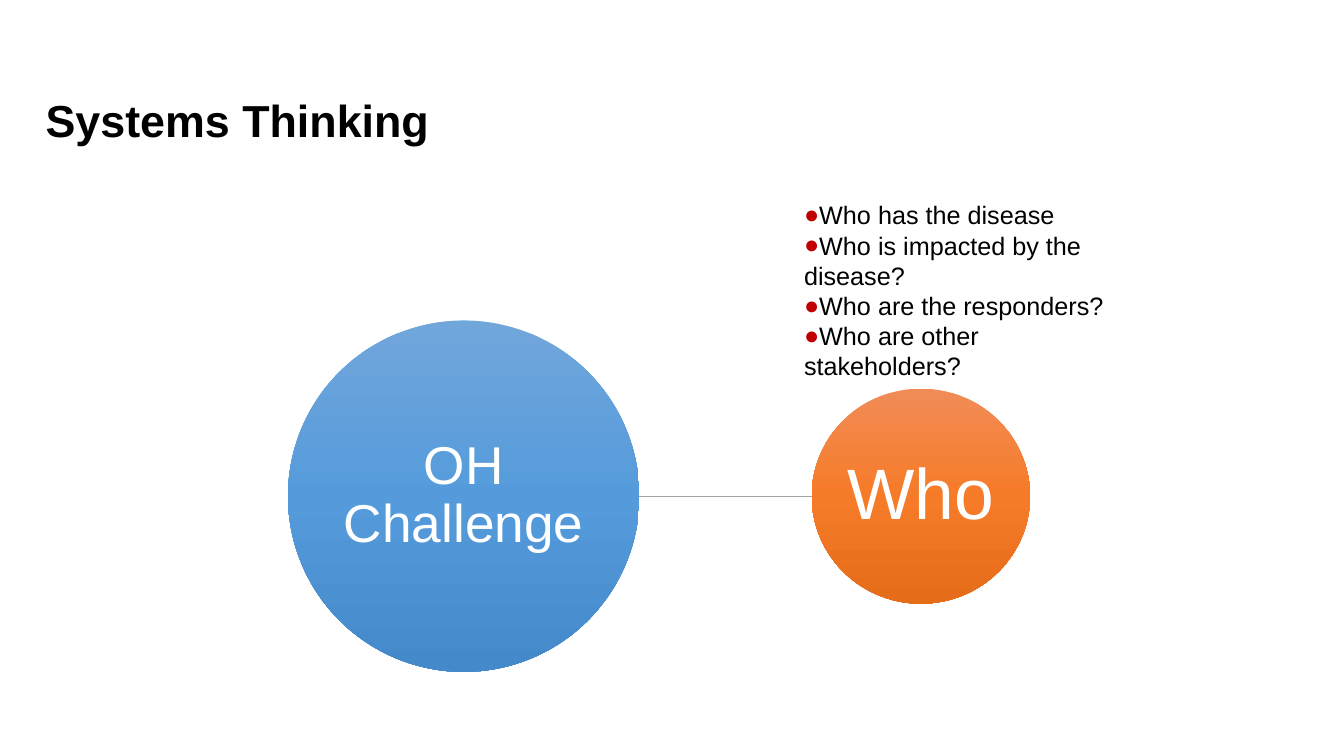
from copy import deepcopy

from lxml.etree import SubElement
from pptx import Presentation
from pptx.dml.color import RGBColor
from pptx.enum.shapes import MSO_CONNECTOR as Connector, MSO_SHAPE as Shape
from pptx.enum.text import MSO_ANCHOR as Anchor, PP_ALIGN as Align
from pptx.oxml.ns import qn
from pptx.util import Pt

QUESTIONS = [
    "Who has the disease",
    "Who is impacted by the disease?",
    "Who are the responders?",
    "Who are other stakeholders?",
]
CENTER_Y = 354.4


def color(value):
    return RGBColor.from_string(value)


class SlideBuilder:
    font_name = "Arial"
    text_color = "000000"
    circle_text_color = "FFFFFF"
    bullet_color = "C00000"
    line_color = "A5A5A5"

    def __init__(self, slide):
        self.slide = slide

    def set_text(self, paragraph, text, size, text_color, bold=False):
        paragraph.text = text
        font = paragraph.font
        font.name = self.font_name
        font.size = Pt(size)
        font.bold = bold
        font.color.rgb = color(text_color)

    def add_bullet(self, paragraph):
        properties = paragraph._p.get_or_add_pPr()
        properties.set("marL", "0")
        properties.set("indent", "0")
        bullet_color = SubElement(properties, qn("a:buClr"))
        SubElement(bullet_color, qn("a:srgbClr"), val=self.bullet_color)
        SubElement(properties, qn("a:buFont"), typeface=self.font_name)
        SubElement(properties, qn("a:buChar"), char="●")
        properties.append(properties.find(qn("a:defRPr")))

    def text_box(self, left, top, width, height, lines, size, bold=False, bullets=False):
        box = self.slide.shapes.add_textbox(Pt(left), Pt(top), Pt(width), Pt(height))
        frame = box.text_frame
        frame.word_wrap = True
        for index, line in enumerate(lines):
            paragraph = frame.add_paragraph() if index else frame.paragraphs[0]
            self.set_text(paragraph, line, size, self.text_color, bold)
            if bullets:
                self.add_bullet(paragraph)

    def circle(self, left, width, height, text, size, inset, gradient):
        top = CENTER_Y - height / 2
        shape = self.slide.shapes.add_shape(
            Shape.OVAL, Pt(left), Pt(top), Pt(width), Pt(height))
        shape.shadow.inherit = False
        shape.line.fill.background()
        self.fill_gradient(shape, gradient)
        frame = shape.text_frame
        frame.word_wrap = True
        frame.vertical_anchor = Anchor.MIDDLE
        frame.margin_left = frame.margin_right = Pt(inset)
        frame.margin_top = frame.margin_bottom = Pt(inset)
        paragraph = frame.paragraphs[0]
        paragraph.alignment = Align.CENTER
        paragraph.line_spacing = 0.9
        self.set_text(paragraph, text, size, self.circle_text_color)

    def fill_gradient(self, shape, gradient):
        fill = shape.fill
        fill.gradient()
        fill.gradient_angle = 270
        stop_list = shape._element.spPr.find(qn("a:gradFill")).find(qn("a:gsLst"))
        stop_list.insert(1, deepcopy(stop_list[0]))
        for index, (stop, value) in enumerate(zip(fill.gradient_stops, gradient)):
            stop.position = index / 2
            stop.color.rgb = color(value)

    def link(self, start_x, end_x):
        connector = self.slide.shapes.add_connector(
            Connector.STRAIGHT, Pt(start_x), Pt(CENTER_Y), Pt(end_x), Pt(CENTER_Y))
        connector.line.color.rgb = color(self.line_color)
        connector.line.width = Pt(0.5)
        SubElement(connector._element.spPr, qn("a:effectLst"))


def main():
    presentation = Presentation()
    presentation.slide_width = Pt(960)
    presentation.slide_height = Pt(540)
    slide = presentation.slides.add_slide(presentation.slide_layouts[6])
    builder = SlideBuilder(slide)
    builder.circle(205.7, 251, 251, "OH Challenge", 38, 2,
                   ["71A6DB", "559BDB", "448ACA"])
    builder.link(456.7, 579.8)
    builder.circle(579.8, 156, 153.6, "Who", 51, 2.6,
                   ["F18C57", "F67B28", "E56C19"])
    builder.text_box(567.2, 139, 246.2, 138.2, QUESTIONS, 18, bullets=True)
    builder.text_box(25.5, 62.9, 296.6, 46, ["Systems Thinking"], 32, bold=True)
    presentation.save("out.pptx")


if __name__ == "__main__":
    main()
